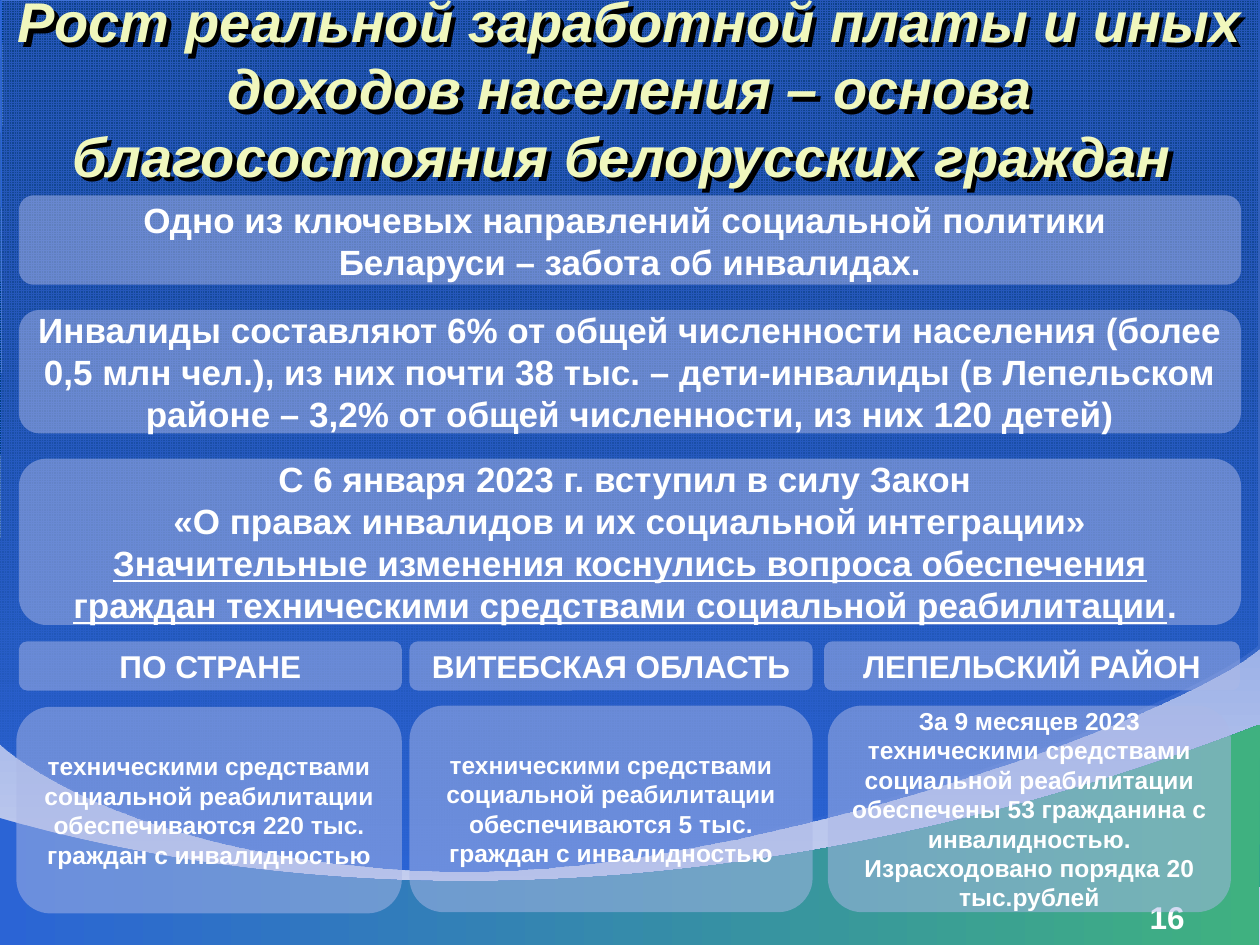
from lxml.etree import SubElement
from pptx import Presentation
from pptx.dml.color import RGBColor as RGB
from pptx.enum.dml import MSO_PATTERN as Pat
from pptx.enum.shapes import MSO_SHAPE as Form
from pptx.enum.text import MSO_ANCHOR as Anchor, PP_ALIGN as Align
from pptx.oxml.ns import qn
from pptx.util import Inches, Pt

WHITE, CREAM = RGB(0xFF, 0xFF, 0xFF), RGB(0xF0, 0xF7, 0xBD)
BLUE, PALE = RGB(0x2B, 0x64, 0xD5), RGB(0xCE, 0xD4, 0xF0)
NAVY, DEEP = RGB(0x00, 0x3D, 0x7B), RGB(0x1F, 0x48, 0x98)
GREEN, LILAC = RGB(0x3F, 0xB1, 0x80), RGB(0xAC, 0xB8, 0xE7)
WIDE, HIGH = 10, 7.5

# Content: a box is a list of paragraphs, a paragraph a list of (text, underlined)
TITLE = ("Рост реальной заработной платы и иных доходов населения – "
         "основа благосостояния белорусских граждан ")
NUMBER = "16"
BANNERS = [
    (1.55, 0.71, [[("Одно из ключевых направлений социальной политики \n"
                    "Беларуси – забота об инвалидах.", False)]]),
    (2.46, 0.98, [[("Инвалиды составляют 6% от общей численности населения "
                    "(более 0,5 млн чел.), из них почти 38 тыс. – дети-инвалиды "
                    "(в Лепельском районе – 3,2% от общей численности, "
                    "из них 120 детей)", False)]]),
    (3.64, 1.32, [[("С 6 января 2023 г. вступил в силу Закон \n"
                    "«О правах инвалидов и их социальной интеграции»", False)],
                  [("Значительные изменения коснулись вопроса обеспечения граждан "
                    "техническими средствами социальной реабилитации", True),
                   (". ", False)]]),
]
AID = ("техническими средствами социальной реабилитации "
       "обеспечиваются {} тыс. граждан с инвалидностью")
# Heading, its left and width, text, its left, top and width
COLUMNS = [
    ("ПО СТРАНЕ", 0.15, 3.04, AID.format(220), 0.13, 5.61, 3.06),
    ("ВИТЕБСКАЯ ОБЛАСТЬ", 3.25, 3.2, AID.format(5), 3.25, 5.6, 3.2),
    ("ЛЕПЕЛЬСКИЙ РАЙОН", 6.54, 3.3,
     "За 9 месяцев 2023 техническими средствами социальной реабилитации "
     "обеспечены 53 гражданина с инвалидностью. "
     "Израсходовано порядка 20 тыс.рублей", 6.57, 5.6, 3.2),
]
# Waves: start, three points for each of two Bezier curves, then corners
GRID = ((-0.01, 5.89), [(0.11, 6.01), (1.1, 6.79), (3.42, 6.9),
                        (5.73, 6.99), (9.34, 5.68), (9.99, 5.12)],
        [(9.99, -0.02), (0, -0.01), (0.01, 0.01)])
SKY = ((0, 5.9), [(0.12, 6.02), (1.12, 6.81), (3.43, 6.91),
                  (5.75, 7.01), (9.36, 5.7), (10, 5.14)],
       [(10, -0.01), (0.02, 0.01), (0.03, 0.02)])
HILL = ((-0.01, 6.49), [(0.11, 6.52), (1.29, 6.9), (3.05, 6.98),
                        (4.81, 7.06), (7.22, 6.83), (10, 5.75)],
        [(9.99, 7.5), (-0.03, 7.5)])

prs = Presentation()
prs.slide_width, prs.slide_height = Inches(WIDE), Inches(HIGH)
slide = prs.slides.add_slide(prs.slide_layouts[6])
shapes = slide.shapes


def fade(color, share):
    """Set the opacity of a colour element, in percent."""
    SubElement(color, qn("a:alpha"), val=str(share * 1000))


def blend(fill, first, last, angle):
    fill.gradient()
    fill.gradient_angle = angle
    for stop, color, pos in zip(fill.gradient_stops, (first, last), (0, 1)):
        stop.color.rgb, stop.position = color, pos


def wave(start, curves, ends):
    """Draw an outline, then turn each three curve points into one Bezier."""
    unit = 100
    pts = [(round(x * unit), round(y * unit)) for x, y in [start] + curves + ends]
    pen = shapes.build_freeform(*pts[0], scale=Inches(1) / unit)
    pen.add_line_segments(pts[1:], close=True)
    shape = pen.convert_to_shape()
    lines = list(shape._element.iter(qn("a:lnTo")))[:len(curves)]
    for n in range(0, len(lines), 3):
        bend = lines[n]
        bend.tag = qn("a:cubicBezTo")
        for line in lines[n + 1:n + 3]:
            bend.append(line[0])
            line.getparent().remove(line)
    shape.shadow.inherit = False
    shape.line.fill.background()
    return shape


def write(shape, paras, size, align=Align.CENTER, anchor=Anchor.MIDDLE, **more):
    frame = shape.text_frame
    frame.word_wrap, frame.vertical_anchor = True, anchor
    for n, parts in enumerate(paras):
        para = frame.add_paragraph() if n else frame.paragraphs[0]
        para.alignment = align
        for text, under in parts:
            look = dict(name="Arial", size=Pt(size), bold=True, underline=under) | more
            color = look.pop("color", WHITE)
            for k, line in enumerate(text.split("\n")):
                if k:
                    para.add_line_break()
                run = para.add_run()
                run.text = line
                for key, val in look.items():
                    setattr(run.font, key, val)
                run.font.color.rgb = color


def label(left, top, width, height):
    return shapes.add_textbox(*map(Inches, (left, top, width, height)))


def panel(left, top, width, height, paras, size):
    box = shapes.add_shape(Form.ROUNDED_RECTANGLE,
                           *map(Inches, (left, top, width, height)))
    box.shadow.inherit = False
    box.line.fill.background()
    box.fill.solid()
    box.fill.fore_color.rgb = LILAC
    fade(box._element.spPr.find(".//" + qn("a:srgbClr")), 50)
    write(box, paras, size)


# Background and waves
blend(slide.background.fill, BLUE, PALE, 270)
mesh = wave(*GRID).fill
mesh.patterned()
mesh.pattern = Pat.SMALL_GRID
mesh.fore_color.rgb, mesh.back_color.rgb = BLUE, NAVY
sky = wave(*SKY)
blend(sky.fill, DEEP, BLUE, 270)
fade(sky._element.spPr.find(".//" + qn("a:srgbClr")), 46)
blend(wave(*HILL).fill, BLUE, GREEN, 0)

# Slide number and title with a shadow behind its letters
write(label(7.17, 7.08, 2.33, 0.27), [[(NUMBER, False)]], 18, Align.RIGHT, Anchor.TOP)
head = label(0, 0.08, WIDE, 1.23)
write(head, [[(TITLE, False)]], 32, color=CREAM, italic=True)
effect = SubElement(head._element.spPr, qn("a:effectLst"))
cast = SubElement(effect, qn("a:outerShdw"), dist="45720", dir="2700000")
SubElement(cast, qn("a:srgbClr"), val="000000")

# Full-width banners, then three columns
for top, height, paras in BANNERS:
    panel(0.15, top, 9.7, height, paras, 20)
for name, left, width, text, x, y, w in COLUMNS:
    panel(left, 5.09, width, 0.39, [[(name, False)]], 18)
    panel(x, y, w, 1.64, [[(text, False)]], 14)

prs.save("out.pptx")
